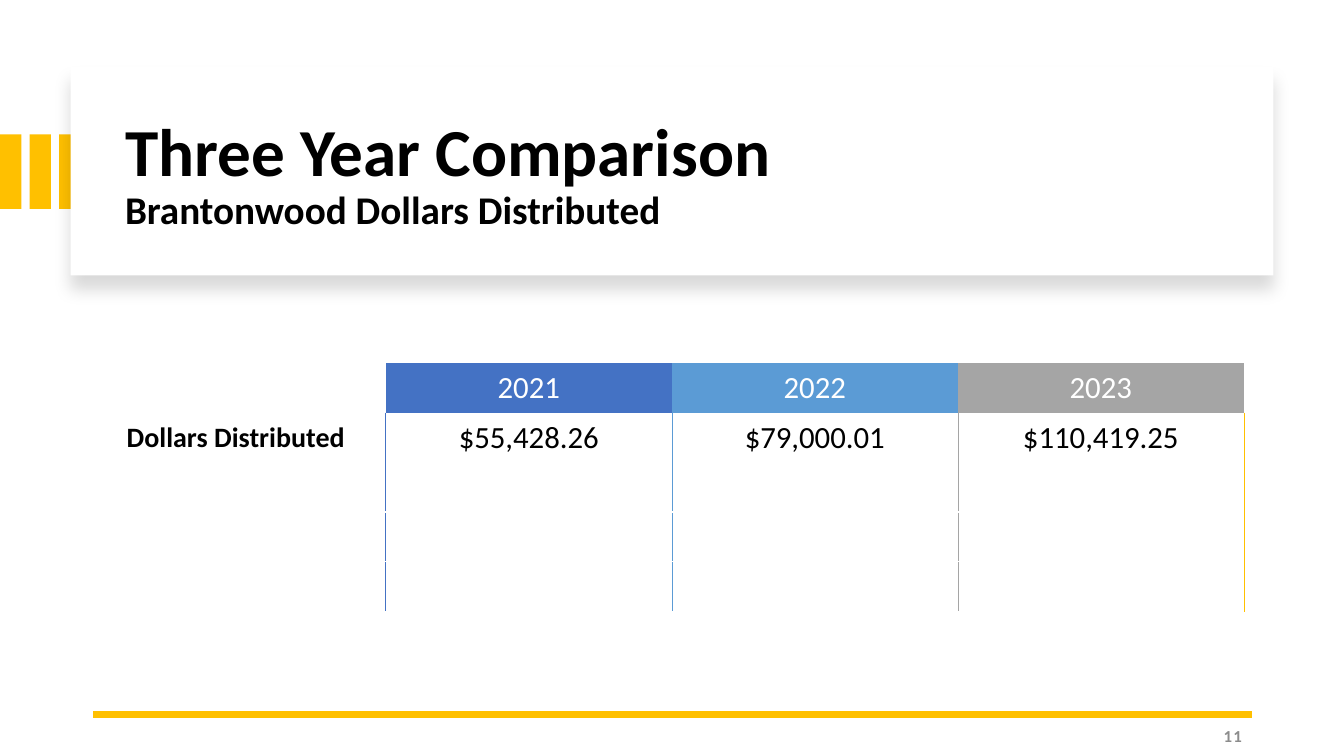
from dataclasses import dataclass

from lxml.etree import SubElement
from pptx import Presentation
from pptx.dml.color import RGBColor
from pptx.enum.shapes import MSO_CONNECTOR as Connector, MSO_SHAPE as Shape
from pptx.enum.text import MSO_ANCHOR as Anchor, MSO_AUTO_SIZE as AutoSize, PP_ALIGN as Align
from pptx.oxml.ns import qn
from pptx.util import Inches, Pt

UNIT = Inches(1) / 3
COLUMNS, ROWS = 40, 22.5
FONT = "Calibri"
GOLD, WHITE, BLACK, GREY = "FFC000", "FFFFFF", "000000", "8C8C8C"
YEAR_COLOURS = ["4472C4", "5B9BD5", "A5A5A5"]
EDGE_COLOURS = [WHITE, *YEAR_COLOURS, GOLD]
NO_STYLE = "{2D5ABB26-0587-4C30-8999-92F81FD0307C}"
YEARS = ["", "2021", "2022", "2023"]
AMOUNTS = ["Dollars Distributed", "$55,428.26", "$79,000.01", "$110,419.25"]
EMPTY_ROWS = 3


@dataclass
class Box:
    """A rectangle measured in grid columns and rows."""
    left: float
    top: float
    width: float
    height: float

    def inner(self, left, top, width, height):
        """Return a box placed relative to this one."""
        return Box(self.left + left, self.top + top, width, height)

    def place(self):
        """Return left, top, width and height as slide lengths."""
        return [grid(n) for n in (self.left, self.top, self.width, self.height)]


def grid(count):
    """Turn grid units into a slide length."""
    return round(count * UNIT)


def colour(code):
    """Turn a hex string into a colour."""
    return RGBColor.from_string(code)


def write(para, text, size, ink=BLACK, bold=False, align=Align.LEFT, spacing=None):
    """Add a formatted span of text to a paragraph."""
    para.alignment = align
    span = para.add_run()
    span.text = text
    font = span.font
    font.name, font.size, font.bold = FONT, Pt(size), bold
    font.color.rgb = colour(ink)
    if spacing:
        font._element.set("spc", str(spacing * 100))


def add_block(shapes, box, fill):
    """Draw a plain filled rectangle."""
    block = shapes.add_shape(Shape.RECTANGLE, *box.place())
    block.shadow.inherit = False
    block.fill.solid()
    block.fill.fore_color.rgb = colour(fill)
    block.line.fill.background()
    return block


def add_bars(page, box):
    """Draw the three evenly spaced bars as a group."""
    bars = page.shapes.add_group_shape()
    for index in range(3):
        add_block(bars.shapes, box.inner(index * 0.88, 0, 0.64, box.height), GOLD)


def add_banner(page, box):
    """Draw the shadowed panel and set the title on it."""
    panel = add_block(page.shapes, box, WHITE)
    effects = panel._element.spPr.find(qn("a:effectLst"))
    shadow = SubElement(effects, qn("a:outerShdw"), blurRad=str(Pt(11)), dist=str(Pt(10)),
                        dir="5400000", algn="t", rotWithShape="0")
    tint = SubElement(shadow, qn("a:srgbClr"), val=BLACK)
    SubElement(tint, qn("a:alpha"), val="15000")

    title = page.shapes.title
    title.left, title.top, title.width, title.height = box.inner(1.32, 0.67, 33.4, 5.1).place()
    page.shapes._spTree.append(title._element)
    frame = title.text_frame
    frame.word_wrap, frame.auto_size = True, AutoSize.NONE
    frame.vertical_anchor = Anchor.MIDDLE
    para = frame.paragraphs[0]
    para.line_spacing = 0.9
    write(para, "Three Year Comparison", size=48, bold=True)
    para.add_line_break()
    write(para, "Brantonwood Dollars Distributed", size=28, bold=True)


def add_footer(page, box):
    """Draw the rule and the page number under its right end."""
    right, top = grid(box.left + box.width), grid(box.top)
    rule = page.shapes.add_connector(Connector.STRAIGHT, right, top, grid(box.left), top)
    rule.line.color.rgb = colour(GOLD)
    rule.line.width = Pt(4.5)
    SubElement(rule._element.spPr, qn("a:effectLst"))
    number = page.shapes.add_textbox(*box.inner(box.width - 9, 0.03, 9, box.height).place())
    frame = number.text_frame
    frame.word_wrap, frame.vertical_anchor = True, Anchor.MIDDLE
    frame.paragraphs[0].space_after = Pt(6)
    write(frame.paragraphs[0], "11", size=12, ink=GREY, bold=True, align=Align.RIGHT, spacing=1)


def add_border(cell, side, code, width):
    """Add one border line to a table cell."""
    line = SubElement(cell._tc.get_or_add_tcPr(), qn(f"a:ln{side}"), w=str(Pt(width)))
    SubElement(SubElement(line, qn("a:solidFill")), qn("a:srgbClr"), val=code)


def fill_cell(cell, row, column, text):
    """Set the borders, fill and text of one table cell."""
    if row:
        add_border(cell, "L", EDGE_COLOURS[column], 0.5 if column else 1)
        add_border(cell, "R", EDGE_COLOURS[column + 1], 0.5)
    if row > 2:
        add_border(cell, "T", WHITE, 1)
    if row > 1:
        add_border(cell, "B", WHITE, 1)
    if row == 0 and column:
        cell.fill.solid()
        cell.fill.fore_color.rgb = colour(EDGE_COLOURS[column])
    else:
        cell.fill.background()
    if text:
        label = column == 0
        cell.vertical_anchor = Anchor.MIDDLE
        cell.margin_left = Inches(0.12)
        cell.margin_right = Inches(0.26 if label else 0.12)
        cell.margin_top = cell.margin_bottom = Inches(0.06)
        write(cell.text_frame.paragraphs[0], text, size=20 if label else 22,
              ink=BLACK if row else WHITE, bold=label, align=Align.CENTER)


def add_comparison(page, box):
    """Build the table of dollars distributed by year."""
    rows = [YEARS, AMOUNTS] + [[""] * len(YEARS)] * EMPTY_ROWS
    table = page.shapes.add_table(len(rows), len(YEARS), *box.place()).table
    table._tbl.tblPr.find(qn("a:tableStyleId")).text = NO_STYLE
    table.first_row = table.horz_banding = False
    for column in table.columns:
        column.width = grid(box.width / len(YEARS))
    for index, texts in enumerate(rows):
        table.rows[index].height = grid(box.height / len(rows))
        for column, text in enumerate(texts):
            fill_cell(table.cell(index, column), index, column, text)


def main():
    """Build and save the slide."""
    deck = Presentation()
    deck.slide_width, deck.slide_height = grid(COLUMNS), grid(ROWS)
    page = deck.slides.add_slide(deck.slide_layouts[5])
    page.background.fill.solid()
    page.background.fill.fore_color.rgb = colour(WHITE)
    add_bars(page, Box(0, 4, 2.4, 2.22))
    add_banner(page, Box(2.1, 2, 35.8, 6.2))
    add_footer(page, Box(2.76, 21.27, 34.5, 1.2))
    add_comparison(page, Box(2.97, 10.8, 34.05, 7.4))
    deck.save("out.pptx")


if __name__ == "__main__":
    main()
